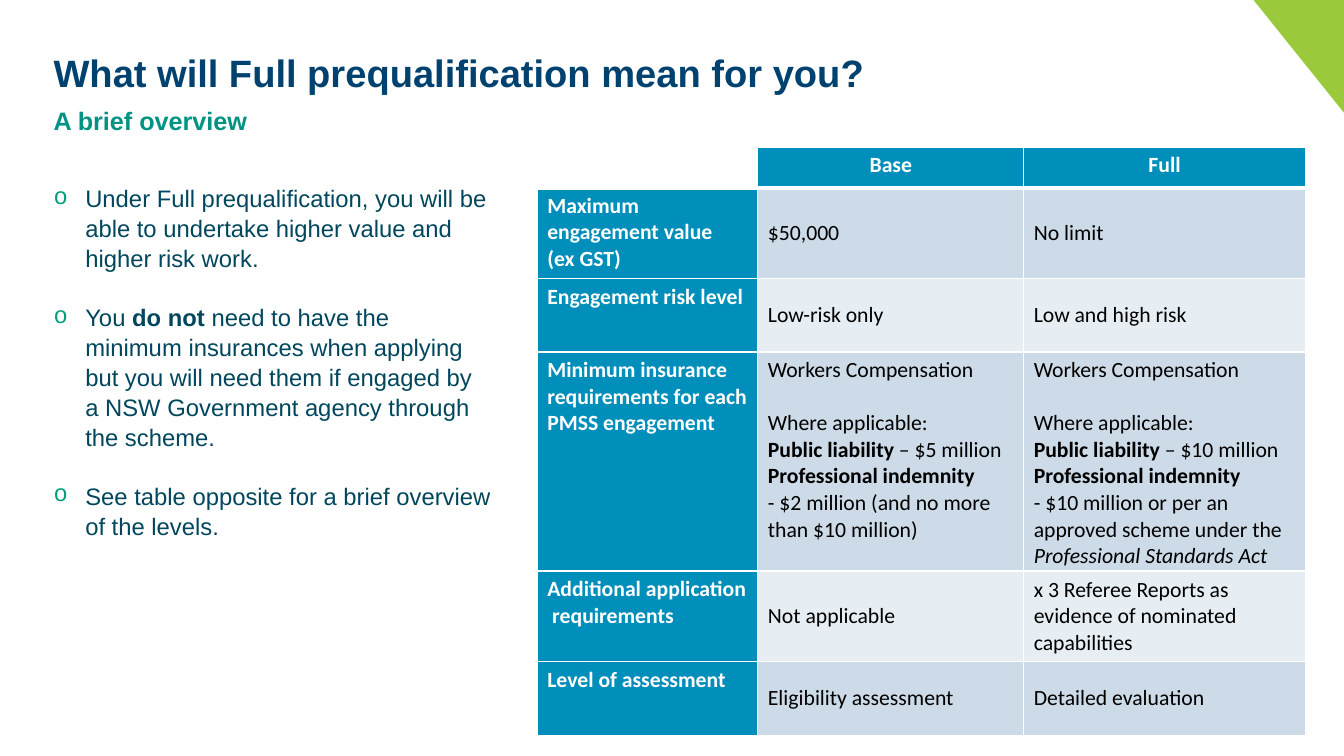
from lxml import etree
from pptx import Presentation
from pptx.dml.color import RGBColor
from pptx.enum.text import MSO_ANCHOR, PP_ALIGN
from pptx.oxml.ns import qn
from pptx.util import Cm, Pt

TOP, MIDDLE = MSO_ANCHOR.TOP, MSO_ANCHOR.MIDDLE
LEFT, CENTER = PP_ALIGN.LEFT, PP_ALIGN.CENTER

WIDTH, HEIGHT = 33.87, 19.05
MARGIN = 1.35
NAVY, GREEN, TEAL = "00426F", "009383", "00475D"
BULLET_GREEN, LIME, BLUE = "009F7A", "9ACA3C", "008EBA"
WHITE, BLACK = "FFFFFF", "000000"
BANDS = ("CCDBE7", "E7EEF3")

BULLETS = [
    [("Under Full prequalification, you will be able to undertake higher value "
      "and higher risk work.", "")],
    [("You ", ""), ("do not ", "bold"),
     ("need to have the minimum insurances when applying but you will need them "
      "if engaged by a NSW Government agency through the scheme.", "")],
    [("See table opposite for a brief overview of the levels.", "")],
]


def insurance(liability, *indemnity):
    """Paragraphs of an insurance cell, each a list of (text, emphasis)."""
    return [
        [("Workers Compensation", "")],
        [("Where applicable:", "")],
        [("Public liability ", "bold"), (f"– {liability}", "")],
        [("Professional indemnity ", "bold"), ("\n", ""), *indemnity],
    ]


COLUMN_WIDTHS = (5.56, 6.7, 7.1)
ROW_HEIGHTS = (1.02, 2.29, 1.85, 5.16, 2.29, 1.85)
ROWS = [
    ("", "Base", "Full"),
    ("Maximum \nengagement value \n(ex GST)", "$50,000", "No limit"),
    ("Engagement risk level", "Low-risk only", "Low and high risk"),
    ("Minimum insurance requirements for each PMSS engagement",
     insurance("$5 million", ("- $2 million (and no more than $10 million)", "")),
     insurance("$10 million",
               ("- $10 million or per an approved scheme under the ", ""),
               ("Professional Standards Act", "italic"))),
    ("Additional application\n requirements", "Not applicable",
     "x 3 Referee Reports as evidence of nominated capabilities"),
    ("Level of assessment", "Eligibility assessment", "Detailed evaluation"),
]
INSURANCE_ROW = 3


def rgb(color):
    return RGBColor.from_string(color)


class SlideBuilder:
    def __init__(self, slide):
        self.slide = slide

    def corner(self, width, height, color):
        """Triangle in the top right corner."""
        builder = self.slide.shapes.build_freeform(Cm(WIDTH), 0)
        builder.add_line_segments([(Cm(WIDTH - width), 0), (Cm(WIDTH), Cm(height))])
        shape = builder.convert_to_shape()
        shape.shadow.inherit = False
        shape.fill.solid()
        shape.fill.fore_color.rgb = rgb(color)
        shape.line.fill.background()

    def add_runs(self, paragraph, segments, font, size, color, bold=False):
        """Fill a paragraph with (text, emphasis) pairs; a newline is a line break."""
        for text, emphasis in segments:
            for index, line in enumerate(text.split("\n")):
                if index:
                    paragraph.add_line_break()
                    etree.SubElement(paragraph._p[-1], qn("a:rPr"), sz=str(int(size * 100)))
                if not line:
                    continue
                run = paragraph.add_run()
                run.text = line
                run.font.name = font
                run.font.size = Pt(size)
                run.font.color.rgb = rgb(color)
                run.font.bold = bold or emphasis == "bold"
                run.font.italic = emphasis == "italic"

    def text_box(self, top, width, height, paragraphs, size, color, bold=False,
                 insets=(0, 0, 0), bullet_color=None):
        """Text at the left margin; insets are top, right and bottom."""
        box = self.slide.shapes.add_textbox(Cm(MARGIN), Cm(top), Cm(width), Cm(height))
        frame = box.text_frame
        frame.word_wrap = True
        frame.margin_left = 0
        frame.margin_top, frame.margin_right, frame.margin_bottom = map(Cm, insets)
        for index, segments in enumerate(paragraphs):
            paragraph = frame.add_paragraph() if index else frame.paragraphs[0]
            paragraph.line_spacing = 1.05
            self.add_runs(paragraph, segments, "Arial", size, color, bold)
            if bullet_color:
                paragraph.space_after = Pt(20.5)
                self.bullet(paragraph, bullet_color)

    def bullet(self, paragraph, color):
        properties = paragraph._p.get_or_add_pPr()
        properties.set("marL", str(Cm(0.8)))
        properties.set("indent", str(-Cm(0.8)))
        bullet_color = etree.SubElement(properties, qn("a:buClr"))
        etree.SubElement(bullet_color, qn("a:srgbClr"), val=color)
        etree.SubElement(properties, qn("a:buFont"), typeface="Courier New")
        etree.SubElement(properties, qn("a:buChar"), char="o")

    def borders(self, cell, top, bottom):
        """White lines round a cell; top and bottom are widths in points."""
        properties = cell._tc.get_or_add_tcPr()
        for side, width in (("L", 1), ("R", 1), ("T", top), ("B", bottom)):
            line = etree.SubElement(properties, qn(f"a:ln{side}"), w=str(Pt(width)))
            fill = etree.SubElement(line, qn("a:solidFill"))
            etree.SubElement(fill, qn("a:srgbClr"), val=WHITE)

    def cell(self, cell, content, fill, color, bold, align, anchor):
        cell.fill.solid()
        cell.fill.fore_color.rgb = rgb(fill)
        cell.vertical_anchor = anchor
        paragraphs = [[(content, "")]] if isinstance(content, str) else content
        for index, segments in enumerate(paragraphs):
            frame = cell.text_frame
            paragraph = frame.add_paragraph() if index else frame.paragraphs[0]
            paragraph.alignment = align
            self.add_runs(paragraph, segments, "Calibri", 15.5, color, bold)
        if len(paragraphs) > 1:
            cell.text_frame.paragraphs[0].space_after = Pt(19)

    def table(self, left, top):
        frame = self.slide.shapes.add_table(
            len(ROWS), len(COLUMN_WIDTHS), Cm(left), Cm(top),
            Cm(sum(COLUMN_WIDTHS)), Cm(sum(ROW_HEIGHTS)))
        table = frame.table
        table.first_row = table.horz_banding = False
        for column, width in zip(table.columns, COLUMN_WIDTHS):
            column.width = Cm(width)
        for row, height in zip(table.rows, ROW_HEIGHTS):
            row.height = Cm(height)
        for r, contents in enumerate(ROWS):
            for c, content in enumerate(contents):
                cell = table.cell(r, c)
                self.borders(cell, 3 if r == 1 else 1, 3 if r == 0 else 1)
                if r == 0 or c == 0:
                    fill = BLUE if content else WHITE
                    align = LEFT if r else CENTER
                    self.cell(cell, content, fill, WHITE, True, align, TOP)
                else:
                    anchor = TOP if (r, c) == (INSURANCE_ROW, 1) else MIDDLE
                    self.cell(cell, content, BANDS[(r - 1) % 2], BLACK, False, LEFT, anchor)


def main():
    presentation = Presentation()
    presentation.slide_width, presentation.slide_height = Cm(WIDTH), Cm(HEIGHT)
    builder = SlideBuilder(presentation.slides.add_slide(presentation.slide_layouts[6]))
    builder.corner(2.28, 2.84, LIME)
    builder.text_box(1.2, 22, 1.78, [[("What will Full prequalification mean for you?", "")]],
                     27.2, NAVY, bold=True)
    builder.text_box(2.62, 30.12, 0.76, [[("A brief overview", "")]], 18, GREEN, bold=True)
    builder.text_box(4.47, 11.28, 12.34, BULLETS, 17, TEAL,
                     insets=(0.13, 0.25, 0.13), bullet_color=BULLET_GREEN)
    builder.table(13.54, 3.71)
    presentation.save("out.pptx")


if __name__ == "__main__":
    main()
